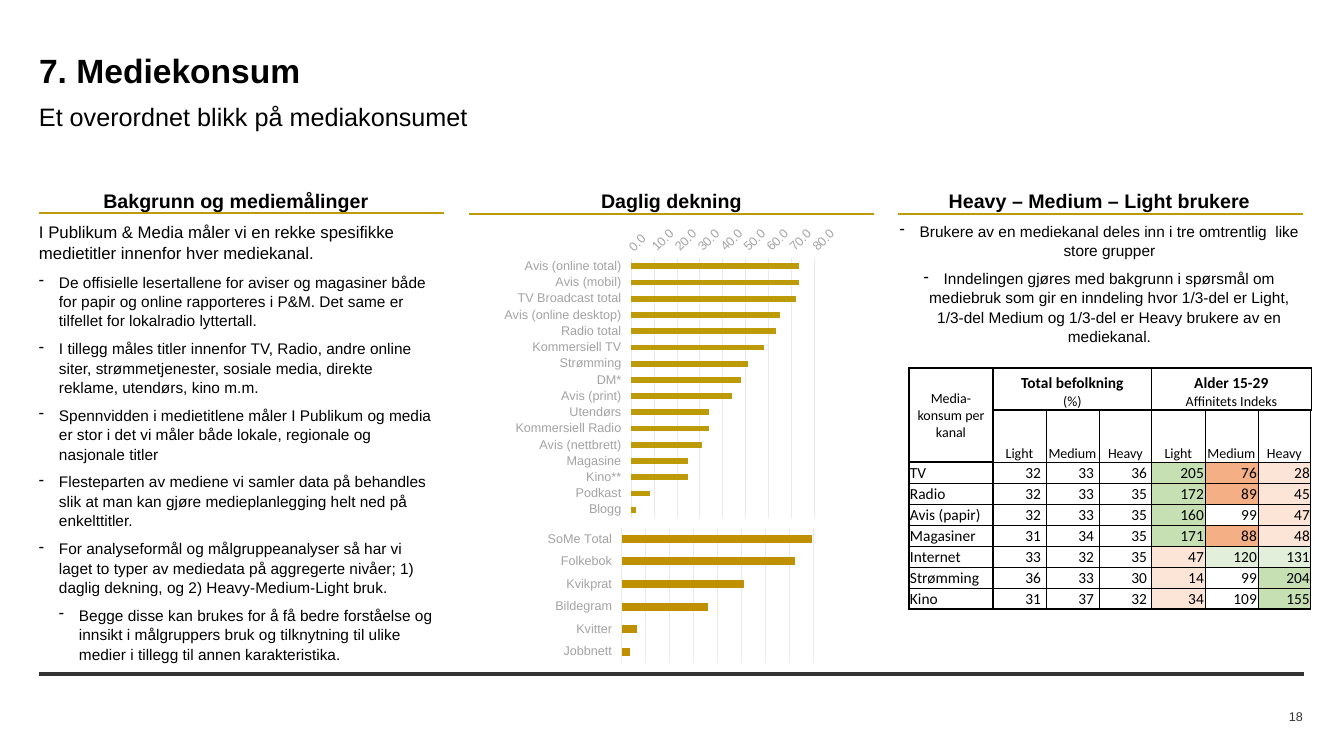
from dataclasses import dataclass

from lxml.etree import SubElement
from pptx import Presentation
from pptx.chart.data import CategoryChartData
from pptx.dml.color import RGBColor
from pptx.enum.chart import XL_CHART_TYPE, XL_TICK_LABEL_POSITION, XL_TICK_MARK
from pptx.enum.shapes import MSO_CONNECTOR
from pptx.enum.text import MSO_ANCHOR, PP_ALIGN
from pptx.oxml import parse_xml
from pptx.oxml.ns import nsdecls, qn
from pptx.util import Emu, Pt


@dataclass(frozen=True)
class Theme:
    font: str = "Arial"
    table_font: str = "Calibri"
    ink: str = "000000"
    footer: str = "333333"
    gold: str = "BD9B08"
    dark_gold: str = "BF9000"
    grid: str = "EAEAEA"
    axis_text: str = "A3A3A3"
    strong_high: str = "C6E0B4"
    high: str = "E2EFDA"
    low: str = "F4B084"
    strong_low: str = "FCE4D6"
    title: int = 24
    subtitle: int = 18
    heading: int = 14
    lead: int = 12
    body: int = 11
    small: int = 10
    note: int = 9
    line_spacing: float = 1.05


LEFT, CENTER, RIGHT = PP_ALIGN.LEFT, PP_ALIGN.CENTER, PP_ALIGN.RIGHT
BACKGROUND = [
    "De offisielle lesertallene for aviser og magasiner både for papir og online rapporteres i P&M. Det same er tilfellet for lokalradio lyttertall.",
    "I tillegg måles titler innenfor TV, Radio, andre online siter, strømmetjenester, sosiale media, direkte reklame, utendørs, kino m.m.",
    "Spennvidden i medietitlene måler I Publikum og media er stor i det vi måler både lokale, regionale og nasjonale titler",
    "Flesteparten av mediene vi samler data på behandles slik at man kan gjøre medieplanlegging helt ned på enkelttitler.",
    "For analyseformål og målgruppeanalyser så har vi laget to typer av mediedata på aggregerte nivåer; 1) daglig dekning, og 2) Heavy-Medium-Light bruk.",
]
BACKGROUND_DETAIL = "Begge disse kan brukes for å få bedre forståelse og innsikt i målgruppers bruk og tilknytning til ulike medier i tillegg til annen karakteristika."
USER_GROUPS = [
    "Brukere av en mediekanal deles inn i tre omtrentlig  like store grupper",
    "Inndelingen gjøres med bakgrunn i spørsmål om mediebruk som gir en inndeling hvor 1/3-del er Light, 1/3-del Medium og 1/3-del er Heavy brukere av en mediekanal.",
]
DAILY_REACH = {
    "Avis (online total)": 73, "Avis (mobil)": 73, "TV Broadcast total": 72,
    "Avis (online desktop)": 65, "Radio total": 63, "Kommersiell TV": 58,
    "Strømming": 51, "DM*": 48, "Avis (print)": 44, "Utendørs": 34,
    "Kommersiell Radio": 34, "Avis (nettbrett)": 31, "Magasine": 25,
    "Kino**": 25, "Podkast": 8, "Blogg": 2,
}
SOCIAL_REACH = {"SoMe Total": 100, "Folkebok": 91, "Kvikprat": 64,
                "Bildegram": 45, "Kvitter": 8, "Jobbnett": 4}
USAGE = [
    ("TV", 32, 33, 36, 205, 76, 28),
    ("Radio", 32, 33, 35, 172, 89, 45),
    ("Avis (papir)", 32, 33, 35, 160, 99, 47),
    ("Magasiner", 31, 34, 35, 171, 88, 48),
    ("Internet", 33, 32, 35, 47, 120, 131),
    ("Strømming", 36, 33, 30, 14, 99, 204),
    ("Kino", 31, 37, 32, 34, 109, 155),
]


def px(length):
    return Emu(round(length * 914400 / 100.8))


class SlideBuilder:
    def __init__(self, presentation, theme):
        self.theme = theme
        self.slide = presentation.slides.add_slide(presentation.slide_layouts[5])

    def style(self, font, size, color, bold=False, name=None):
        font.name, font.size, font.bold = name or self.theme.font, Pt(size), bold
        font.color.rgb = RGBColor.from_string(color)

    def fill_text(self, shape, box, paragraphs, anchor=MSO_ANCHOR.TOP):
        """Fill a shape with (text, size, bold, alignment, bullet indent) rows."""
        shape.left, shape.top, shape.width, shape.height = map(px, box)
        frame = shape.text_frame
        frame.word_wrap, frame.vertical_anchor = True, anchor
        frame.margin_left = frame.margin_right = frame.margin_top = frame.margin_bottom = 0
        for index, (text, size, bold, alignment, indent) in enumerate(paragraphs):
            paragraph = frame.add_paragraph() if index else frame.paragraphs[0]
            paragraph.text = text
            if indent:
                properties = paragraph._p.get_or_add_pPr()
                properties.set("marL", str(px(indent)))
                properties.set("indent", str(-px(20)))
                SubElement(properties, qn("a:buChar")).set("char", "-")
                paragraph.level = indent // 20 - 1
            paragraph.alignment = alignment
            paragraph.line_spacing = self.theme.line_spacing
            paragraph.space_before = Pt(6 if index else 0)
            self.style(paragraph.font, size, self.theme.ink, bold)
        return frame

    def title(self, box, text):
        self.fill_text(self.slide.shapes.title, box,
                       [(text, self.theme.title, True, LEFT, 0)], MSO_ANCHOR.MIDDLE)

    def text(self, box, paragraphs):
        return self.fill_text(self.slide.shapes.add_textbox(0, 0, 0, 0), box, paragraphs)

    def rule(self, left, right, y, color, weight):
        line = self.slide.shapes.add_connector(
            MSO_CONNECTOR.STRAIGHT, px(left), px(y), px(right), px(y))
        line.line.color.rgb, line.line.width = RGBColor.from_string(color), Pt(weight)
        SubElement(line._element.spPr, qn("a:effectLst"))

    def bar_chart(self, box, reach, color, maximum, step, plot_area, show_values):
        data = CategoryChartData(number_format="0.0")
        data.categories = list(reach)
        data.add_series("Series 1", list(reach.values()))
        chart = self.slide.shapes.add_chart(
            XL_CHART_TYPE.BAR_CLUSTERED, *map(px, box), data).chart
        chart.has_legend = chart.has_title = False
        self.style(chart.font, self.theme.note, self.theme.axis_text)
        plot = chart.plots[0]
        plot.gap_width, plot.vary_by_categories = 182, False
        fill = plot.series[0].format.fill
        fill.solid()
        fill.fore_color.rgb = RGBColor.from_string(color)
        grid_color = RGBColor.from_string(self.theme.grid)
        categories, values = chart.category_axis, chart.value_axis
        for axis in (categories, values):
            axis.major_tick_mark = axis.minor_tick_mark = XL_TICK_MARK.NONE
            self.style(axis.tick_labels.font, self.theme.note, self.theme.axis_text)
        categories.reverse_order = True
        categories.tick_label_position = XL_TICK_LABEL_POSITION.LOW
        values.minimum_scale, values.maximum_scale, values.major_unit = 0, maximum, step
        values.visible = show_values
        values.format.line.fill.background()
        values._element.find(qn("c:txPr")).find(qn("a:bodyPr")).set("rot", "-2700000")
        for line in (categories.format.line, values.major_gridlines.format.line):
            line.color.rgb, line.width = grid_color, Pt(0.75)
        area = chart._chartSpace.chart.plotArea
        for layout in area.findall(qn("c:layout")):
            area.remove(layout)
        parts = "".join(f'<c:{key} val="{value}"/>' for key, value in zip("xywh", plot_area))
        area.insert(0, parse_xml(
            f'<c:layout {nsdecls("c")}><c:manualLayout><c:layoutTarget val="inner"/>'
            f'<c:xMode val="edge"/><c:yMode val="edge"/>{parts}</c:manualLayout></c:layout>'))

    def cell(self, cell, runs, alignment, borders, fill=None, anchor=MSO_ANCHOR.BOTTOM, right=1):
        """Runs are (text, size, bold), one line each; borders are left, right, top, bottom."""
        cell.margin_left = cell.margin_top = px(1)
        cell.margin_right, cell.margin_bottom = px(right), 0
        cell.vertical_anchor = anchor
        paragraph = cell.text_frame.paragraphs[0]
        paragraph.alignment = alignment
        for index, (text, size, bold) in enumerate(runs):
            if index:
                paragraph.add_line_break()
            run = paragraph.add_run()
            run.text = text
            self.style(run.font, size, self.theme.ink, bold, self.theme.table_font)
        properties = cell._tc.get_or_add_tcPr()
        for side, weight in zip("LRTB", borders):
            properties.append(parse_xml(
                f'<a:ln{side} {nsdecls("a")} w="{Pt(weight)}"><a:solidFill>'
                f'<a:srgbClr val="{self.theme.ink}"/></a:solidFill></a:ln{side}>'))
        if fill:
            cell.fill.solid()
            cell.fill.fore_color.rgb = RGBColor.from_string(fill)
        else:
            cell.fill.background()

    def index_fill(self, index):
        theme = self.theme
        bands = [(150, theme.strong_high), (120, theme.high), (90, None), (50, theme.low)]
        return next((fill for limit, fill in bands if index >= limit), theme.strong_low)

    def usage_table(self, left, top, widths, heights):
        theme = self.theme
        table = self.slide.shapes.add_table(
            len(heights), len(widths), px(left), px(top), px(sum(widths)), px(sum(heights))).table
        table.first_row = table.horz_banding = False
        for column, width in zip(table.columns, widths):
            column.width = px(width)
        for row, height in zip(table.rows, heights):
            row.height = px(height)
        for start, end in (((0, 0), (1, 0)), ((0, 1), (0, 3)), ((0, 4), (0, 6))):
            table.cell(*start).merge(table.cell(*end))
        headers = {0: [("Media- konsum per kanal", theme.small, False)],
                   1: [("Total befolkning", theme.body, True), ("(%)", theme.small, False)],
                   4: [("Alder 15-29", theme.body, True), ("Affinitets Indeks", theme.small, False)]}
        levels = ("", *("Light", "Medium", "Heavy") * 2)
        last = len(heights) - 1
        for row in range(len(heights)):
            for column in range(len(widths)):
                heavy = (column in (0, 1, 4), column in (0, 3, 6),
                         row <= (1 if column else 2),
                         row in (0, last) or (row, column) == (1, 0))
                borders = [1 if edge else 0.5 for edge in heavy]
                cell = table.cell(row, column)
                if row == 0:
                    anchor = MSO_ANCHOR.BOTTOM if column else MSO_ANCHOR.MIDDLE
                    self.cell(cell, headers.get(column, []), CENTER, borders, anchor=anchor)
                elif row == 1:
                    runs = [(levels[column], theme.small, False)] if column else []
                    self.cell(cell, runs, CENTER, borders)
                else:
                    value = USAGE[row - 2][column]
                    self.cell(cell, [(str(value), theme.body, False)], RIGHT if column else LEFT,
                              borders, self.index_fill(value) if column > 3 else None,
                              right=5 if 1 <= column <= 3 else 1)


def main():
    theme = Theme()
    presentation = Presentation()
    presentation.slide_width, presentation.slide_height = px(1344), px(756)
    builder = SlideBuilder(presentation, theme)

    def heading(text):
        return (text, theme.heading, True, CENTER, 0)

    builder.title((39, 47, 1264, 44), "7. Mediekonsum")
    builder.text((39, 100, 1265, 43),
                 [("Et overordnet blikk på mediakonsumet", theme.subtitle, False, LEFT, 0)])
    lead = "I Publikum & Media måler vi en rekke spesifikke medietitler innenfor hver mediekanal."
    builder.text((39, 188, 394, 476), [
        heading("Bakgrunn og mediemålinger"),
        (lead, theme.lead, False, LEFT, 0),
        *[(text, theme.body, False, LEFT, 20) for text in BACKGROUND],
        (BACKGROUND_DETAIL, theme.body, False, LEFT, 40)])
    builder.text((469, 188, 405, 30), [heading("Daglig dekning")])
    builder.text((897, 188, 405, 160), [
        heading("Heavy – Medium – Light brukere"),
        *[(text, theme.body, False, CENTER, 20) for text in USER_GROUPS]])
    builder.usage_table(909, 368, [84] + [53] * 6, [42, 52] + [21] * len(USAGE))
    builder.bar_chart((502, 222, 340, 302), DAILY_REACH, theme.gold, 80, 10,
                      (0.38, 0.12, 0.54, 0.86), True)
    builder.bar_chart((545, 513, 296, 183), SOCIAL_REACH, theme.dark_gold, 101, 12.6,
                      (0.26, 0.08, 0.65, 0.74), False)
    for left, y in ((39, 213), (469, 214), (898, 214)):
        builder.rule(left, left + 405, y, theme.gold, 1.5)
    builder.rule(39, 1304, 674, theme.footer, 3)
    number = builder.text((1196, 705, 107, 22), [("18", theme.note, False, RIGHT, 0)])
    number.vertical_anchor = MSO_ANCHOR.MIDDLE
    number.paragraphs[0].font.color.rgb = RGBColor.from_string(theme.footer)
    presentation.save("out.pptx")


if __name__ == "__main__":
    main()
